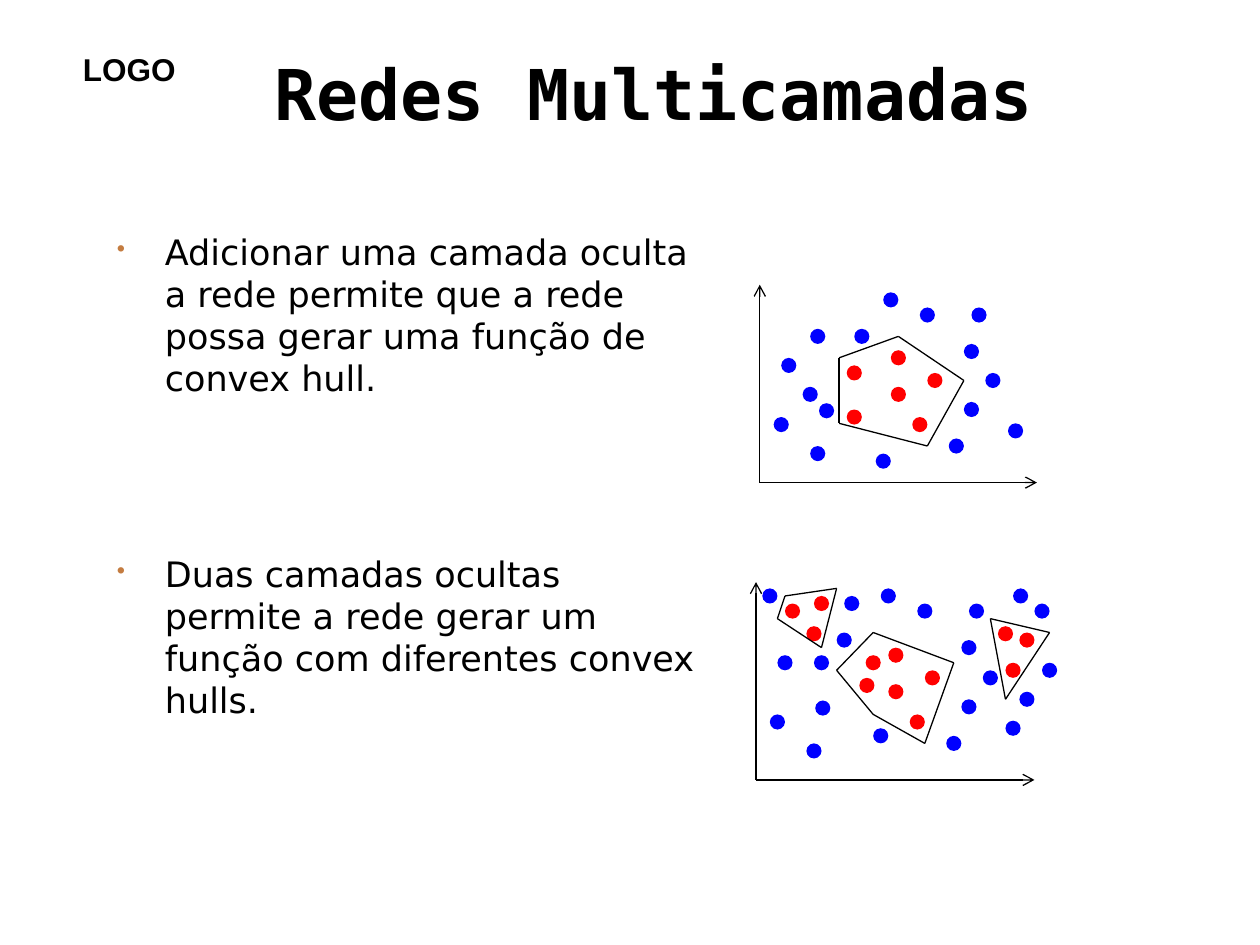
from dataclasses import dataclass

from lxml.etree import SubElement
from pptx import Presentation
from pptx.dml.color import RGBColor
from pptx.enum.shapes import MSO_CONNECTOR, MSO_SHAPE
from pptx.enum.text import MSO_ANCHOR
from pptx.oxml.ns import qn
from pptx.util import Inches, Pt


@dataclass(frozen=True)
class Theme:
    ink: str = "000000"
    inside: str = "FF0000"
    outside: str = "0000FF"
    bullet: str = "C47C40"
    logo_font: str = "Arial"
    title_font: str = "DejaVu Sans Mono"
    body_font: str = "DejaVu Sans"
    logo_size: int = 18
    title_size: int = 40
    body_size: int = 20
    line_width: float = 0.75
    dot: float = 0.12


class SlideBuilder:
    def __init__(self, slide, theme):
        self.slide = slide
        self.theme = theme

    def text(self, box, lines, font, size, bold=False, wrap=True, anchor=MSO_ANCHOR.TOP):
        """Add a text box and return its paragraphs."""
        shape = self.slide.shapes.add_textbox(*map(Inches, box))
        frame = shape.text_frame
        frame.word_wrap = wrap
        frame.vertical_anchor = anchor
        frame.text = "\n".join(lines)
        for paragraph in frame.paragraphs:
            paragraph.font.name = font
            paragraph.font.size = Pt(size)
            paragraph.font.bold = bold
            paragraph.font.color.rgb = RGBColor.from_string(self.theme.ink)
        return frame.paragraphs

    def bullets(self, box, lines, gap):
        theme = self.theme
        paragraphs = self.text(box, lines, theme.body_font, theme.body_size)
        for paragraph in paragraphs:
            properties = paragraph._p.get_or_add_pPr()
            properties.set("marL", str(Inches(0.38)))
            properties.set("indent", str(Inches(-0.38)))
            # Bullet elements stand before the default run properties
            font_properties = properties.find(qn("a:defRPr"))
            color = SubElement(properties, qn("a:buClr"))
            SubElement(color, qn("a:srgbClr"), val=theme.bullet)
            SubElement(properties, qn("a:buSzPct"), val="70000")
            SubElement(properties, qn("a:buChar"), char="•")
            if font_properties is not None:
                properties.append(font_properties)
        for paragraph in paragraphs[1:]:
            paragraph.space_before = Pt(gap)

    def dots(self, group, positions, color):
        size = Inches(self.theme.dot)
        for left, top in positions:
            dot = group.shapes.add_shape(
                MSO_SHAPE.OVAL, Inches(left), Inches(top), size, size)
            dot.shadow.inherit = False
            dot.fill.solid()
            dot.fill.fore_color.rgb = RGBColor.from_string(color)
            dot.line.fill.background()

    def line(self, group, start, end, arrow=False):
        connector = group.shapes.add_connector(
            MSO_CONNECTOR.STRAIGHT, *map(Inches, (*start, *end)))
        connector.line.color.rgb = RGBColor.from_string(self.theme.ink)
        connector.line.width = Pt(self.theme.line_width)
        if arrow:
            SubElement(connector.line._get_or_add_ln(), qn("a:tailEnd"), type="arrow")
        SubElement(connector._element.spPr, qn("a:effectLst"))

    def hull(self, group, corners):
        for start, end in zip(corners, corners[1:] + corners[:1]):
            self.line(group, start, end)

    def scatter(self, origin, x_end, y_end, inside, outside, hulls):
        group = self.slide.shapes.add_group_shape()
        self.dots(group, inside, self.theme.inside)
        self.dots(group, outside, self.theme.outside)
        for corners in hulls:
            self.hull(group, corners)
        self.line(group, origin, (origin[0], y_end), arrow=True)
        self.line(group, origin, (x_end, origin[1]), arrow=True)


# Dot positions are left and top; hulls list their corners in order
ONE_HULL = dict(
    origin=(6.03, 3.83), x_end=8.23, y_end=2.26,
    inside=[(6.72, 2.9), (6.72, 3.25), (7.07, 3.07), (7.07, 2.78),
            (7.36, 2.96), (7.24, 3.31)],
    outside=[(6.37, 3.07), (6.43, 2.61), (6.78, 2.61), (7.3, 2.44),
             (6.43, 3.54), (6.2, 2.84), (6.14, 3.31), (6.95, 3.6),
             (6.5, 3.2), (7.65, 3.19), (7.53, 3.48), (7.65, 2.73),
             (7.71, 2.44), (7.01, 2.32), (7.82, 2.96), (8, 3.36)],
    hulls=[[(6.66, 2.84), (6.66, 3.36), (7.36, 3.54), (7.65, 3.02), (7.13, 2.67)]],
)
THREE_HULLS = dict(
    origin=(6, 6.19), x_end=8.21, y_end=4.62,
    inside=[(6.87, 5.2), (6.23, 4.79), (7.05, 5.43), (7.05, 5.14),
            (7.34, 5.32), (7.22, 5.67), (6.4, 4.97), (6.82, 5.38),
            (7.92, 4.97), (7.98, 5.26), (8.09, 5.02), (6.46, 4.73)],
    outside=[(6.46, 5.2), (6.64, 5.02), (7.28, 4.79), (6.4, 5.9),
             (6.17, 5.2), (6.11, 5.67), (6.93, 5.78), (6.47, 5.56),
             (7.63, 5.55), (7.51, 5.84), (7.63, 5.08), (7.69, 4.79),
             (6.99, 4.67), (7.8, 5.32), (7.98, 5.72), (6.05, 4.67),
             (8.04, 4.67), (6.7, 4.73), (8.27, 5.26), (8.21, 4.79),
             (8.09, 5.49)],
    hulls=[[(6.64, 5.32), (6.93, 5.02), (7.57, 5.26), (7.34, 5.9), (6.93, 5.67)],
           [(6.52, 5.14), (6.64, 4.67), (6.23, 4.73), (6.17, 4.91)],
           [(7.98, 5.55), (8.33, 5.02), (7.86, 4.91)]],
)


def main():
    presentation = Presentation()
    presentation.slide_width = Inches(10)
    presentation.slide_height = Inches(7.5)
    theme = Theme()
    slide = presentation.slides.add_slide(presentation.slide_layouts[6])
    builder = SlideBuilder(slide, theme)

    # Heading
    builder.text((0.56, 0.35, 0.94, 0.4), ["LOGO"], theme.logo_font,
                 theme.logo_size, bold=True, wrap=False)
    builder.text((2.08, 0.25, 7.42, 0.97), ["Redes Multicamadas"], theme.title_font,
                 theme.title_size, bold=True, anchor=MSO_ANCHOR.MIDDLE)

    # Explanations, each level with its plot
    builder.bullets((0.83, 1.78, 4.88, 4.49), [
        "Adicionar uma camada oculta a rede permite que a rede possa gerar "
        "uma função de convex hull.",
        "Duas camadas ocultas permite a rede gerar um função com diferentes "
        "convex hulls.",
    ], gap=88)

    # Plots
    for plot in (ONE_HULL, THREE_HULLS):
        builder.scatter(**plot)

    presentation.save("out.pptx")


if __name__ == "__main__":
    main()
